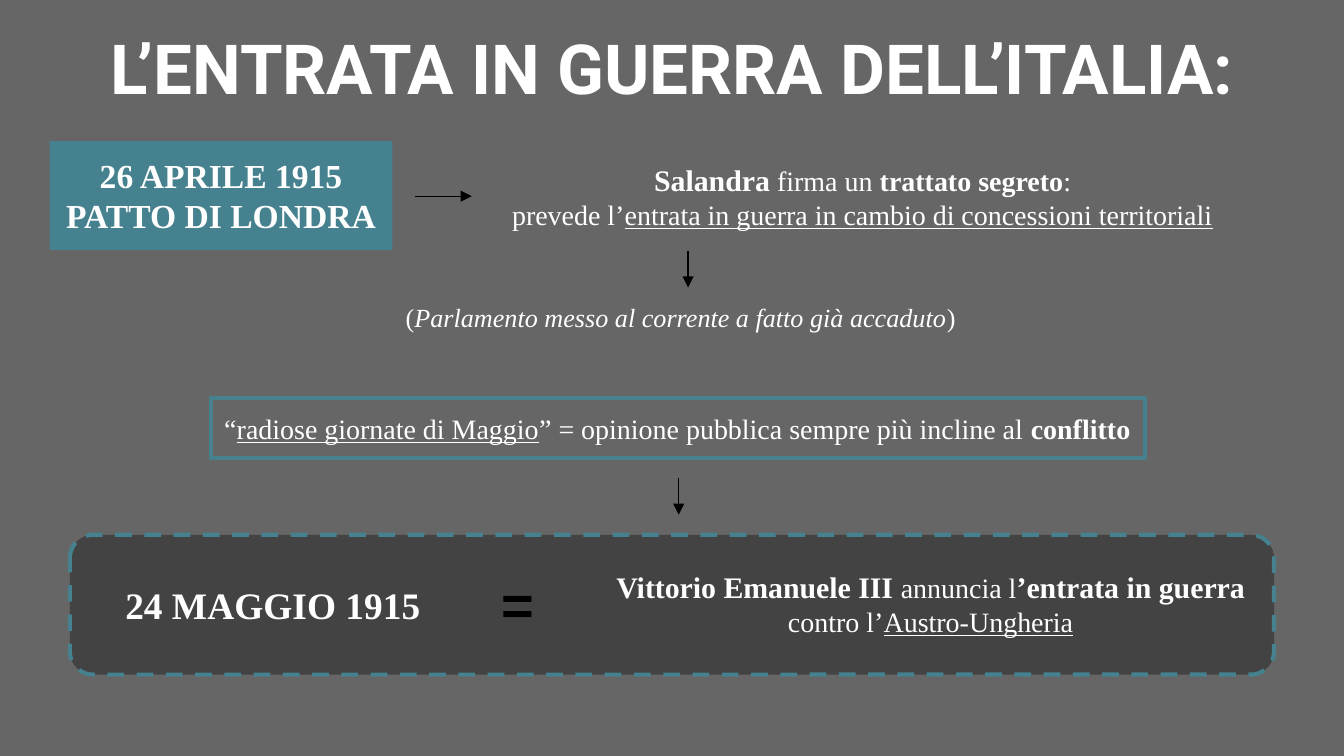
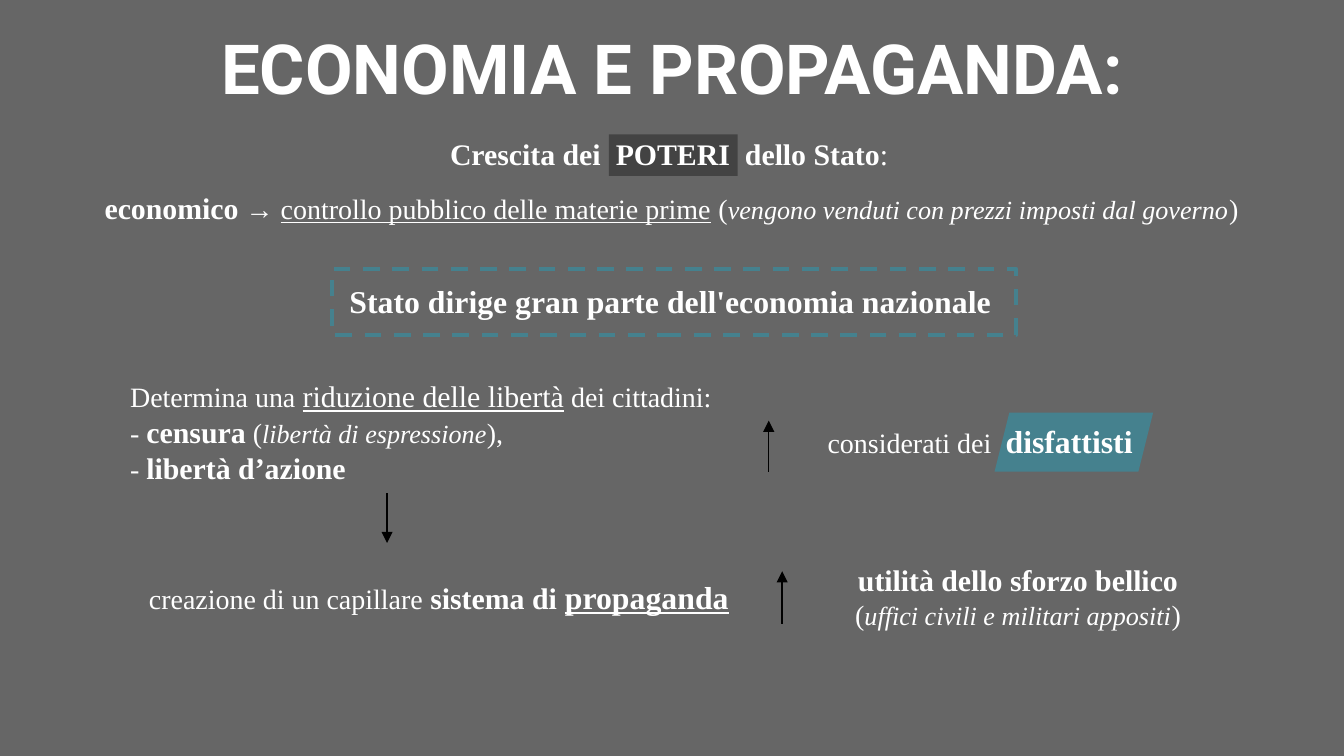
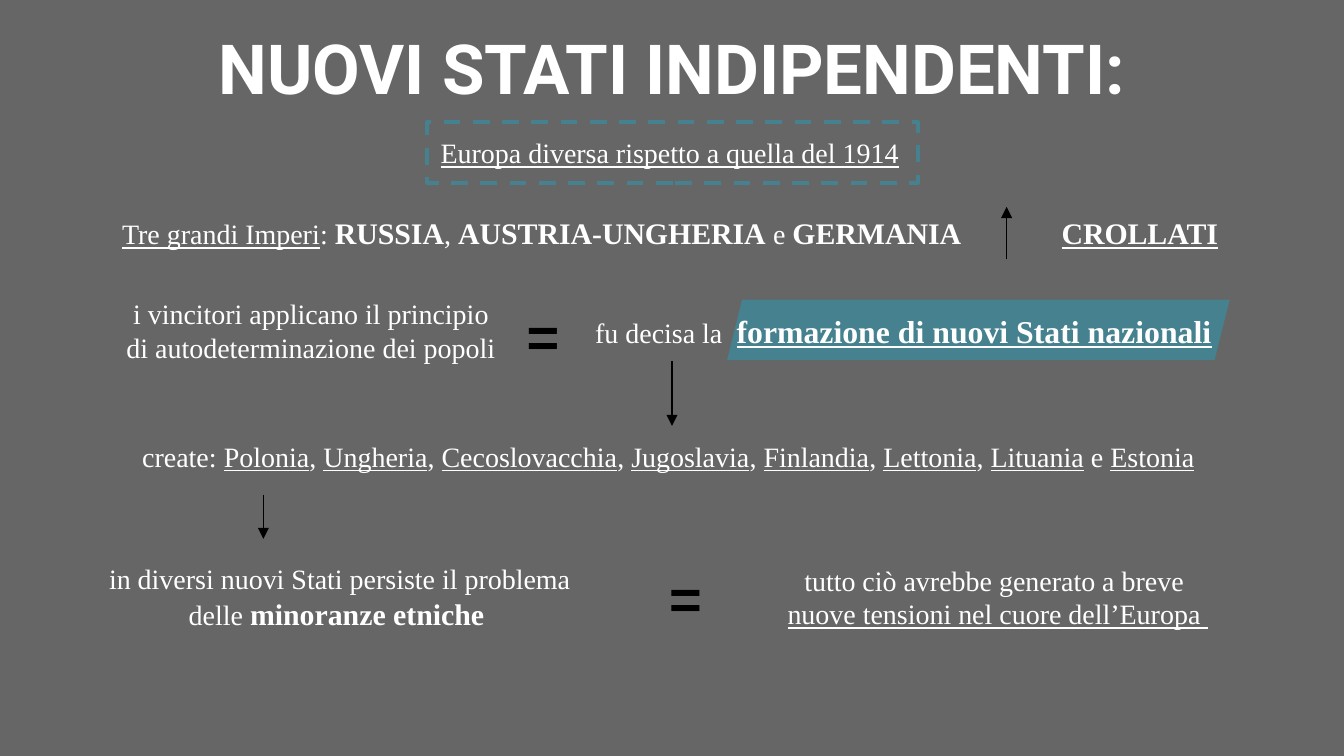
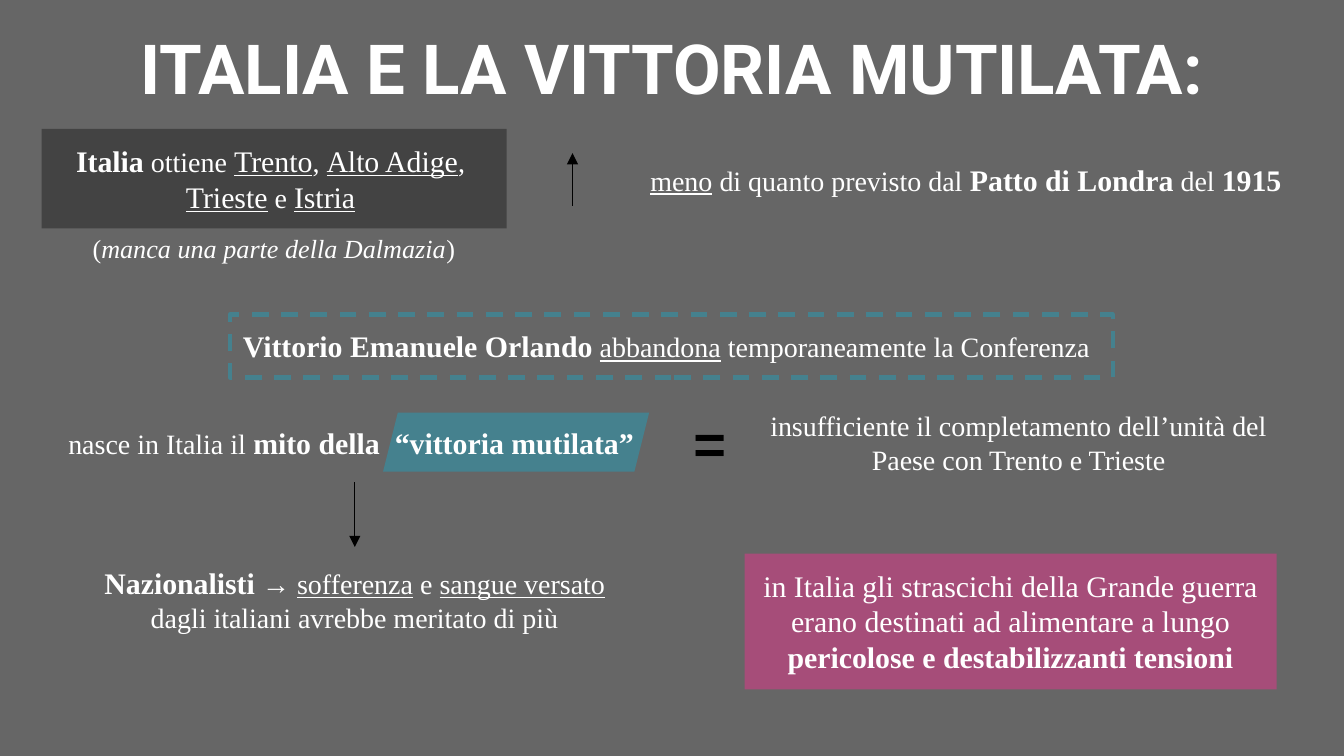
import dataclasses
import typing

import pptx
import pptx.dml.color
import pptx.enum.dml
import pptx.enum.shapes
import pptx.enum.text
import pptx.oxml.ns
import pptx.util
from lxml import etree

Inches = pptx.util.Inches
Align = pptx.enum.text.PP_ALIGN
Preset = pptx.enum.shapes.MSO_SHAPE
At = tuple[float, float, float, float]


@dataclasses.dataclass(frozen=True)
class Theme:
    background: str = "666666"
    panel: str = "434343"
    teal: str = "45818E"
    magenta: str = "A64D79"
    light: str = "FFFFFF"
    dark: str = "000000"
    title_font: str = "Roboto"
    body_font: str = "Times New Roman"
    symbol_font: str = "Arial"
    title: float = 37
    symbol: float = 30
    date: float = 20
    heading: float = 18
    key: float = 17
    strong: float = 16
    body: float = 15
    aside: float = 14
    border: float = 2.25
    arrow: float = 0.75


THEME = Theme()


@dataclasses.dataclass(frozen=True)
class Run:
    text: str
    size: float = THEME.body
    bold: bool = False
    italic: bool = False
    underline: bool = False
    font: str = THEME.body_font
    color: str = THEME.light
    extra_spacing: float = 0


Lines = list[list[Run]]


@dataclasses.dataclass(frozen=True)
class Block:
    at: At
    lines: Lines = dataclasses.field(default_factory=list)
    centered: bool = False
    fill: str | None = None
    border: str | None = None
    dashed: bool = False
    preset: Preset = Preset.RECTANGLE


@dataclasses.dataclass(frozen=True)
class Arrow:
    start: tuple[float, float]
    end: tuple[float, float]


@dataclasses.dataclass(frozen=True)
class SlideContent:
    title: str
    items: list[Block | Arrow]


def plain(text: str) -> Run:
    return Run(text)


def bold(text: str, size: float = THEME.strong) -> Run:
    return Run(text, size, bold=True)


def underlined(text: str, size: float = THEME.body) -> Run:
    return Run(text, size, underline=True)


def key_underlined(text: str, size: float = THEME.key) -> Run:
    return Run(text, size, bold=True, underline=True)


def italic(text: str) -> Run:
    return Run(text, THEME.aside, italic=True)


def aside(text: str) -> Run:
    return Run(text, THEME.aside)


def wide_space(size: float, is_bold: bool = False) -> Run:
    return Run(" ", size, bold=is_bold, extra_spacing=size / 4)


def equals_sign(left: float, top: float) -> Block:
    sign = Run("=", THEME.symbol, bold=True, font=THEME.symbol_font, color=THEME.dark)
    return Block((left, top, 0.51, 0.71), [[sign]])


def dashed_box(at: At, runs: list[Run], centered: bool = False) -> Block:
    return Block(at, [runs], centered, border=THEME.teal, dashed=True)


def highlight(at: At, color: str = THEME.teal, preset: Preset = Preset.PARALLELOGRAM) -> Block:
    return Block(at, fill=color, preset=preset)


def underlined_list(names: list[str]) -> list[Run]:
    runs = []
    for index, name in enumerate(names):
        if index:
            runs.append(plain(" e " if index == len(names) - 1 else ", "))
        runs.append(underlined(name))
    return runs


def rgb(color: str) -> pptx.dml.color.RGBColor:
    return pptx.dml.color.RGBColor.from_string(color)


def add_text(paragraph: typing.Any, text: str, *, size: float, font: str, color: str,
             bold: bool = False, italic: bool = False, underline: bool = False,
             extra_spacing: float = 0) -> None:
    run = paragraph.add_run()
    run.text = text
    run.font.name = font
    run.font.size = pptx.util.Pt(size)
    run.font.color.rgb = rgb(color)
    run.font.bold = bold
    run.font.italic = italic
    run.font.underline = underline
    if extra_spacing:
        run._r.get_or_add_rPr().set("spc", str(round(extra_spacing * 100)))


def fill_frame(frame: typing.Any, lines: Lines, centered: bool) -> None:
    frame.word_wrap = True
    frame.auto_size = pptx.enum.text.MSO_AUTO_SIZE.NONE
    frame.vertical_anchor = pptx.enum.text.MSO_ANCHOR.TOP
    frame.margin_left = frame.margin_right = Inches(0.1)
    frame.margin_top = frame.margin_bottom = Inches(0.1)
    for index, runs in enumerate(lines):
        paragraph = frame.add_paragraph() if index else frame.paragraphs[0]
        paragraph.alignment = Align.CENTER if centered else Align.LEFT
        for run in runs:
            options = dataclasses.asdict(run)
            add_text(paragraph, options.pop("text"), **options)


def draw_block(slide: typing.Any, block: Block) -> None:
    place = [Inches(length) for length in block.at]
    if block.fill or block.border:
        shape = slide.shapes.add_shape(block.preset, *place)
        shape.shadow.inherit = False
        if block.fill:
            shape.fill.solid()
            shape.fill.fore_color.rgb = rgb(block.fill)
        else:
            shape.fill.background()
        if block.border:
            shape.line.color.rgb = rgb(block.border)
            shape.line.width = pptx.util.Pt(THEME.border)
            if block.dashed:
                shape.line.dash_style = pptx.enum.dml.MSO_LINE.DASH
        else:
            shape.line.fill.background()
    else:
        shape = slide.shapes.add_textbox(*place)
    if block.lines:
        fill_frame(shape.text_frame, block.lines, block.centered)


def draw_arrow(slide: typing.Any, arrow: Arrow) -> None:
    ends = [Inches(length) for length in arrow.start + arrow.end]
    connector = slide.shapes.add_connector(pptx.enum.shapes.MSO_CONNECTOR.STRAIGHT, *ends)
    connector.line.color.rgb = rgb(THEME.dark)
    connector.line.width = pptx.util.Pt(THEME.arrow)
    outline = connector.line._get_or_add_ln()
    etree.SubElement(outline, pptx.oxml.ns.qn("a:tailEnd"), type="triangle")
    etree.SubElement(connector._element.spPr, pptx.oxml.ns.qn("a:effectLst"))


def draw_title(slide: typing.Any, text: str) -> None:
    title = slide.shapes.title
    title.left, title.top = Inches(0), Inches(0.09)
    title.width, title.height = Inches(10), Inches(0.82)
    run = Run(text, THEME.title, bold=True, font=THEME.title_font)
    fill_frame(title.text_frame, [[run]], centered=True)


ENTRY = SlideContent("L’ENTRATA IN GUERRA DELL’ITALIA:", [
    Block((0.52, 3.98, 8.96, 1.04), fill=THEME.panel, border=THEME.teal, dashed=True,
          preset=Preset.ROUNDED_RECTANGLE),
    Block((0.37, 1.05, 2.55, 0.81),
          [[bold("26 APRILE 1915", THEME.heading)], [bold("PATTO DI LONDRA", THEME.heading)]],
          centered=True, fill=THEME.teal),
    Arrow((3.09, 1.46), (3.51, 1.46)),
    Block((3.68, 1.1, 5.53, 0.72), [
        [bold("Salandra"), plain(" firma un "), bold("trattato segreto", THEME.body), plain(": ")],
        [plain("prevede l’"),
         underlined("entrata in guerra in cambio di concessioni territoriali"), plain(" ")],
    ], centered=True),
    Block((2.92, 2.14, 4.41, 0.44),
          [[aside("("), italic("Parlamento messo al corrente a fatto già accaduto"), aside(")")]]),
    Arrow((5.12, 1.87), (5.12, 2.14)),
    Block((1.57, 2.96, 6.95, 0.45), [[
        plain("“"), underlined("radiose giornate di Maggio"),
        plain("” = opinione pubblica sempre più incline al "), bold("conflitto", THEME.body),
    ]], border=THEME.teal),
    Arrow((5.05, 3.56), (5.05, 3.83)),
    Block((0.79, 4.23, 2.48, 0.54), [[bold("24 MAGGIO 1915", THEME.date)]], centered=True),
    equals_sign(3.63, 4.14),
    Block((4.41, 4.13, 5.03, 0.72), [[
        bold("Vittorio Emanuele III "), plain("annuncia l"), bold("’entrata in guerra "),
        plain("contro l’"), underlined("Austro-Ungheria"),
    ]], centered=True),
])

ECONOMY = SlideContent("ECONOMIA E PROPAGANDA:", [
    highlight((7.4, 3.07, 1.18, 0.44)),
    highlight((4.53, 1, 0.96, 0.31), THEME.panel, Preset.RECTANGLE),
    Block((3.25, 0.91, 3.49, 0.47), [[
        bold("Crescita dei"), wide_space(THEME.strong, True), bold("POTERI"),
        wide_space(THEME.strong, True), bold("dello Stato"), Run(":", THEME.strong),
    ]]),
    Block((0.68, 1.31, 8.65, 0.47), [[
        bold("economico"), plain(" → "), underlined("controllo pubblico delle materie prime"),
        plain(" ("), italic("vengono venduti con prezzi imposti dal governo"), plain(")"),
    ]]),
    dashed_box((2.47, 2, 5.09, 0.49),
               [bold("Stato dirige gran parte dell'economia nazionale", THEME.key), plain(" ")],
               centered=True),
    Block((0.87, 2.71, 4.66, 1.01), [
        [plain("Determina una "), underlined("riduzione delle libertà", THEME.strong),
         plain(" dei cittadini:")],
        [plain("- "), bold("censura"), plain(" ("), italic("libertà di espressione"), plain("),")],
        [plain("- "), bold("libertà d’azione")],
    ]),
    Arrow((5.72, 3.51), (5.72, 3.13)),
    Block((6.06, 3.04, 3.07, 0.49),
          [[plain("considerati dei"), wide_space(THEME.body), bold("disfattisti", THEME.key)]]),
    Arrow((2.88, 3.67), (2.88, 4.04)),
    Block((1.01, 4.2, 4.79, 0.49), [[
        plain("creazione di un capillare "), bold("sistema di"), bold(" ", THEME.key),
        key_underlined("propaganda"), plain(" "),
    ]]),
    Arrow((5.82, 4.64), (5.82, 4.25)),
    Block((6.15, 4.08, 2.85, 0.72), [[
        bold("utilità dello sforzo bellico "), plain("("),
        italic("uffici civili e militari appositi"), plain(")"),
    ]], centered=True),
])

NEW_STATES = SlideContent("NUOVI STATI INDIPENDENTI:", [
    highlight((5.41, 2.23, 3.74, 0.45)),
    dashed_box((3.18, 0.91, 3.65, 0.45), [underlined("Europa diversa rispetto a quella del 1914")]),
    Block((0.81, 1.5, 6.48, 0.47), [[
        underlined("Tre grandi Imperi"), plain(": "), bold("RUSSIA"), plain(", "),
        bold("AUSTRIA-UNGHERIA"), plain(" e "), bold("GERMANIA"), plain(" "),
    ]]),
    Arrow((7.49, 1.93), (7.49, 1.54)),
    Block((7.8, 1.5, 1.39, 0.47), [[key_underlined("CROLLATI", THEME.strong)]]),
    Block((0.81, 2.11, 3.01, 0.71),
          [[plain("i vincitori applicano il principio di autodeterminazione dei popoli")]],
          centered=True),
    equals_sign(3.82, 2.14),
    Block((4.33, 2.22, 4.86, 0.49), [[
        plain("fu decisa la"), wide_space(THEME.body),
        key_underlined("formazione di nuovi Stati nazionali"),
    ]]),
    Arrow((5, 2.69), (5, 3.17)),
    Block((0.96, 3.17, 8.08, 0.45), [[plain("create: "), *underlined_list([
        "Polonia", "Ungheria", "Cecoslovacchia", "Jugoslavia",
        "Finlandia", "Lettonia", "Lituania", "Estonia",
    ]), plain(" ")]]),
    Arrow((1.96, 3.68), (1.96, 4.01)),
    Block((0.66, 4.08, 3.74, 0.72), [[
        plain("in diversi nuovi Stati persiste il problema delle "),
        bold("minoranze etniche"), plain(" "),
    ]], centered=True),
    equals_sign(4.88, 4.09),
    Block((5.51, 4.09, 3.83, 0.71), [
        [plain("tutto ciò avrebbe generato a breve ")],
        [underlined("nuove tensioni nel cuore dell’Europa ")],
    ], centered=True),
])

VICTORY = SlideContent("ITALIA E LA VITTORIA MUTILATA:", [
    highlight((2.85, 3.07, 1.98, 0.44)),
    Block((0.31, 0.96, 3.46, 0.74), [
        [bold("Italia"), plain(" ottiene "), underlined("Trento", THEME.strong), plain(", "),
         underlined("Alto Adige", THEME.strong), plain(", ")],
        [underlined("Trieste", THEME.strong), plain(" e "),
         underlined("Istria", THEME.strong), plain(" ")],
    ], centered=True, fill=THEME.panel),
    Block((4.74, 1.1, 4.95, 0.47), [[
        underlined("meno"), plain(" di quanto previsto dal "), bold("Patto di Londra"),
        plain(" del "), bold("1915"),
    ]]),
    Arrow((4.26, 1.53), (4.26, 1.14)),
    Block((0.59, 1.63, 2.92, 0.44),
          [[aside("("), italic("manca una parte della Dalmazia"), aside(")")]]),
    dashed_box((1.71, 2.34, 6.57, 0.47), [
        bold("Vittorio Emanuele Orlando"), plain(" "), underlined("abbandona"),
        plain(" temporaneamente la Conferenza"),
    ]),
    Block((0.41, 3.06, 4.47, 0.47), [[
        plain("nasce in Italia il "), bold("mito della"), wide_space(THEME.strong, True),
        bold("“vittoria mutilata”"), plain(" "),
    ]]),
    equals_sign(5.06, 2.94),
    Block((5.57, 2.94, 4.02, 0.71),
          [[plain("insufficiente il completamento dell’unità del Paese con Trento e Trieste")]],
          centered=True),
    Arrow((2.64, 3.59), (2.64, 4.07)),
    Block((0.53, 4.1, 4.22, 0.72), [[
        bold("Nazionalisti"), plain(" → "), underlined("sofferenza"), plain(" e "),
        underlined("sangue versato"), plain(" dagli italiani avrebbe meritato di più"),
    ]], centered=True),
    Block((5.54, 4.12, 3.96, 1.01), [[
        Run("in Italia gli strascichi della Grande guerra erano destinati ad alimentare a lungo ",
            THEME.strong),
        bold("pericolose e destabilizzanti tensioni"),
    ]], centered=True, fill=THEME.magenta),
])


def main() -> None:
    presentation = pptx.Presentation()
    presentation.slide_width = Inches(10)
    presentation.slide_height = Inches(10) * 9 // 16
    background = presentation.slide_master.background.fill
    background.solid()
    background.fore_color.rgb = rgb(THEME.background)
    title_only = presentation.slide_layouts[5]
    for content in (ENTRY, ECONOMY, NEW_STATES, VICTORY):
        slide = presentation.slides.add_slide(title_only)
        draw_title(slide, content.title)
        for item in content.items:
            if isinstance(item, Arrow):
                draw_arrow(slide, item)
            else:
                draw_block(slide, item)
    presentation.save("out.pptx")


if __name__ == "__main__":
    main()
